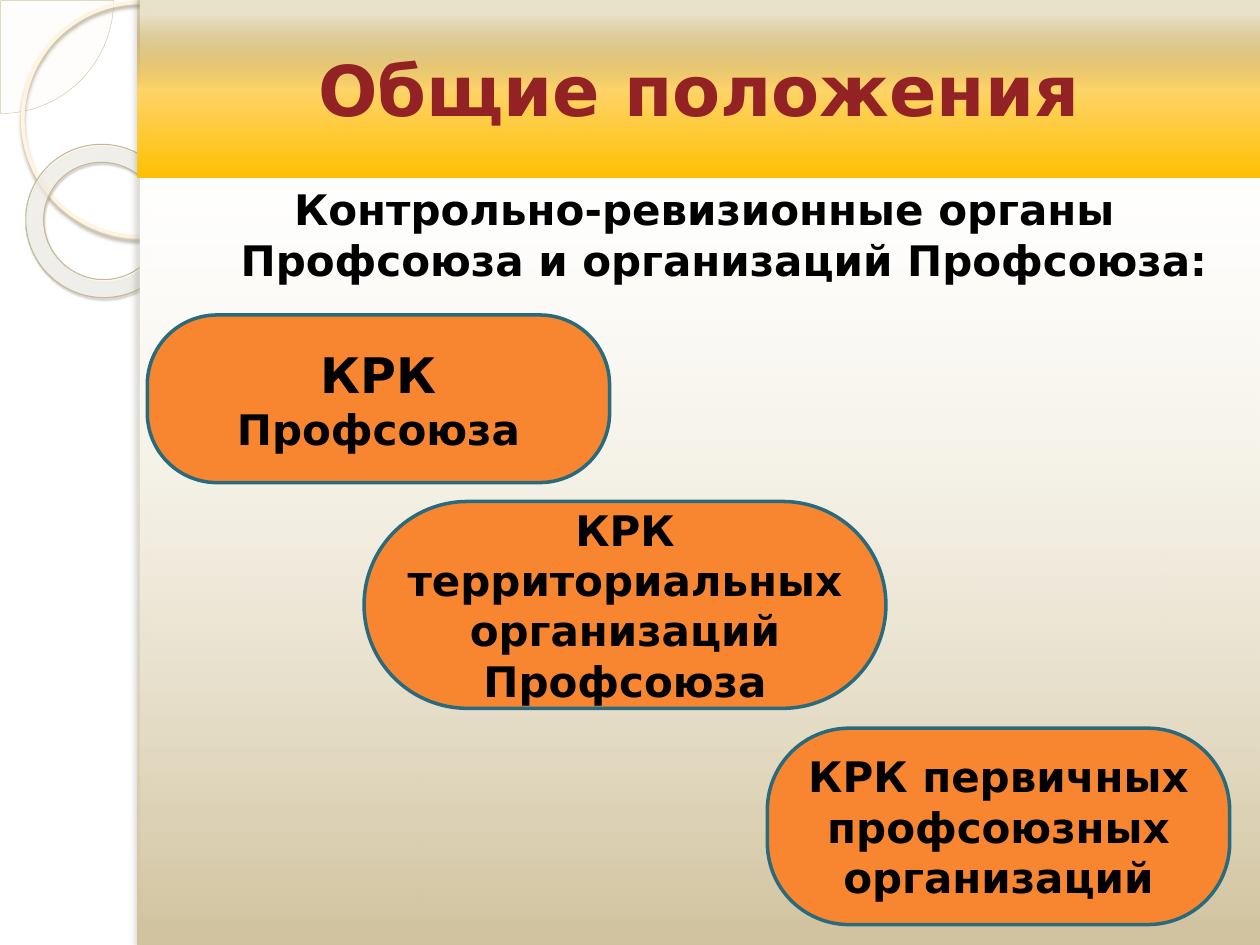
from lxml import etree
from pptx import Presentation
from pptx import util as u
from pptx.dml.color import RGBColor
from pptx.enum import shapes, text
from pptx.oxml.ns import qn

FONT = "DejaVu Sans"
WHITE = RGBColor(0xFF, 0xFF, 0xFF)
BLACK = RGBColor(0, 0, 0)
MAROON = RGBColor(0x92, 0x22, 0x23)
ORANGE = RGBColor(0xF8, 0x86, 0x31)
TEAL = RGBColor(0x29, 0x6B, 0x7C)
CREAM = RGBColor(0xFE, 0xFA, 0xF4)
SAND = RGBColor(0xD3, 0xC3, 0x9F)
RING = RGBColor(0xFF, 0xF5, 0xDE)
RING_SHADOW = RGBColor(0xB0, 0xA6, 0x8F)
DONUT_LINE = RGBColor(0xC7, 0xB8, 0x93)
DONUT_SHADOW = RGBColor(0x5A, 0x54, 0x44)
STRIP_SHADOW = RGBColor(0x73, 0x6F, 0x63)

# Gradient stops: position %, colour, opacity %
TITLE_STOPS = [(8, RGBColor(0x97, 0x72, 0), 20),
               (50, RGBColor(0xFE, 0xD4, 0x6A), 100),
               (100, RGBColor(0xFF, 0xC0, 0), 100)]
BODY_STOPS = [(0, RGBColor(0xF0, 0xEB, 0xD5), 0),
              (100, RGBColor(0xD1, 0xC3, 0x9F), 100)]
DONUT_STOPS = [(0, RGBColor(0xFF, 0xFC, 0xF6), 70),
               (70, RGBColor(0xFF, 0xFE, 0xFB), 55),
               (100, RGBColor(0xF0, 0xD2, 0x8E), 60)]


def add(parent, tag, **attrs):
    values = {k: str(v) for k, v in attrs.items()}
    return etree.SubElement(parent, qn("a:" + tag), values)


def add_color(parent, color, opacity):
    clr = add(parent, "srgbClr", val=color)
    add(clr, "alpha", val=opacity * 1000)


def fill_gradient(sp, stops, angle=90, focus=None):
    """Fill with a linear gradient, or a circular one inside the focus rectangle."""
    sp.fill.gradient()
    grad = sp.element.spPr.find(qn("a:gradFill"))
    for child in list(grad):
        grad.remove(child)
    gs_list = add(grad, "gsLst")
    for pos, color, opacity in stops:
        add_color(add(gs_list, "gs", pos=pos * 1000), color, opacity)
    if focus:
        sides = {k: v * 1000 for k, v in zip("ltrb", focus)}
        add(add(grad, "path", path="circle"), "fillToRect", **sides)
    else:
        add(grad, "lin", ang=angle * 60000, scaled=0)


def write(p, content, size=24, color=BLACK, bold=True):
    p.alignment = text.PP_ALIGN.CENTER
    r = p.add_run()
    r.text = content
    r.font.name = FONT
    r.font.size = u.Pt(size)
    r.font.bold = bold
    r.font.color.rgb = color


class Deck:
    def __init__(self):
        self.prs = Presentation()
        self.prs.slide_width, self.prs.slide_height = u.Cm(25.4), u.Cm(19.05)
        self.s = self.prs.slides.add_slide(self.prs.slide_layouts[1])

    def shape(self, kind, box, fill=None, opacity=100, line=None, width=1, adj=()):
        sp = self.s.shapes.add_shape(kind, *map(u.Cm, box))
        sp.shadow.inherit = False
        for i, value in enumerate(adj):
            sp.adjustments[i] = value
        if fill is None:
            sp.fill.background()
        else:
            sp.fill.solid()
            sp.fill.fore_color.rgb = fill
            if opacity < 100:
                clr = sp.element.spPr.find(qn("a:solidFill"))[0]
                add(clr, "alpha", val=opacity * 1000)
        if line is None:
            sp.line.fill.background()
        else:
            sp.line.color.rgb = line
            sp.line.width = u.Pt(width)
        return sp

    def shadow(self, sp, color, opacity, blur, dist, angle):
        effects = sp.element.spPr.find(qn("a:effectLst"))
        outer = add(effects, "outerShdw", blurRad=u.Pt(blur), dist=u.Pt(dist),
                    dir=angle * 60000, algn="tl", rotWithShape=0)
        add_color(outer, color, opacity)

    def placeholder(self, idx, box, stops, anchor):
        """Place a template placeholder in front of everything drawn so far."""
        sp = self.s.placeholders[idx]
        self.s.shapes.element.append(sp.element)
        sp.left, sp.top, sp.width, sp.height = map(u.Cm, box)
        fill_gradient(sp, stops)
        tf = sp.text_frame
        tf.auto_size = text.MSO_AUTO_SIZE.NONE
        tf.vertical_anchor = anchor
        return tf.paragraphs[0]

    def organ(self, box, runs, adj):
        sp = self.shape(shapes.MSO_SHAPE.ROUNDED_RECTANGLE, box, ORANGE,
                        line=TEAL, width=2, adj=[adj])
        tf = sp.text_frame
        tf.word_wrap = True
        tf.vertical_anchor = text.MSO_ANCHOR.MIDDLE
        for content, size in runs:
            write(tf.paragraphs[0], content, size=size)

    def decoration(self):
        kinds = shapes.MSO_SHAPE
        self.shape(kinds.PIE, (-2.26, -2.26, 4.55, 4.55), CREAM, opacity=33,
                   line=SAND, width=0.25, adj=[0, 54])
        ring = self.shape(kinds.OVAL, (0.46, 0.05, 4.72, 4.72), line=RING, width=2.15)
        self.shadow(ring, RING_SHADOW, 85, 2, 2, 90)
        donut = self.shape(kinds.DONUT, (0.51, 2.92, 3.12, 3.07),
                           line=DONUT_LINE, width=0.58, adj=[0.118])
        donut.rotation = 38.6
        fill_gradient(donut, DONUT_STOPS, focus=(-408, -50, 508, 150))
        self.shadow(donut, DONUT_SHADOW, 35, 1, 1.2, 75)
        self.shape(kinds.RECTANGLE, (2.82, 0, 22.58, 19.05), WHITE)
        strip = self.shape(kinds.RECTANGLE, (2.82, 0, 0.2, 19.05), WHITE)
        self.shadow(strip, STRIP_SHADOW, 25, 3, 3, 180)


def main():
    deck = Deck()
    deck.decoration()

    p = deck.placeholder(0, (2.77, 0, 22.63, 3.58), TITLE_STOPS, text.MSO_ANCHOR.MIDDLE)
    write(p, "Общие положения", size=40, color=MAROON)

    p = deck.placeholder(1, (2.77, 3.58, 22.63, 15.47), BODY_STOPS, text.MSO_ANCHOR.TOP)
    write(p, "Контрольно-ревизионные органы Профсоюза и организаций Профсоюза:")
    p.space_before = u.Pt(0)
    pPr = p._p.get_or_add_pPr()
    pPr.set("marL", str(u.Cm(1.02)))
    pPr.set("indent", str(u.Cm(-0.79)))
    add(pPr, "buNone")

    deck.organ((2.97, 6.35, 9.32, 3.38), [("КРК ", 28), ("Профсоюза", 24)], 0.416)
    deck.organ((7.34, 10.11, 10.52, 4.17),
               [("КРК территориальных организаций Профсоюза", 24)], 0.5)
    deck.organ((15.47, 14.68, 9.32, 3.96),
               [("КРК первичных профсоюзных организаций", 24)], 0.416)
    deck.prs.save("out.pptx")


if __name__ == "__main__":
    main()
